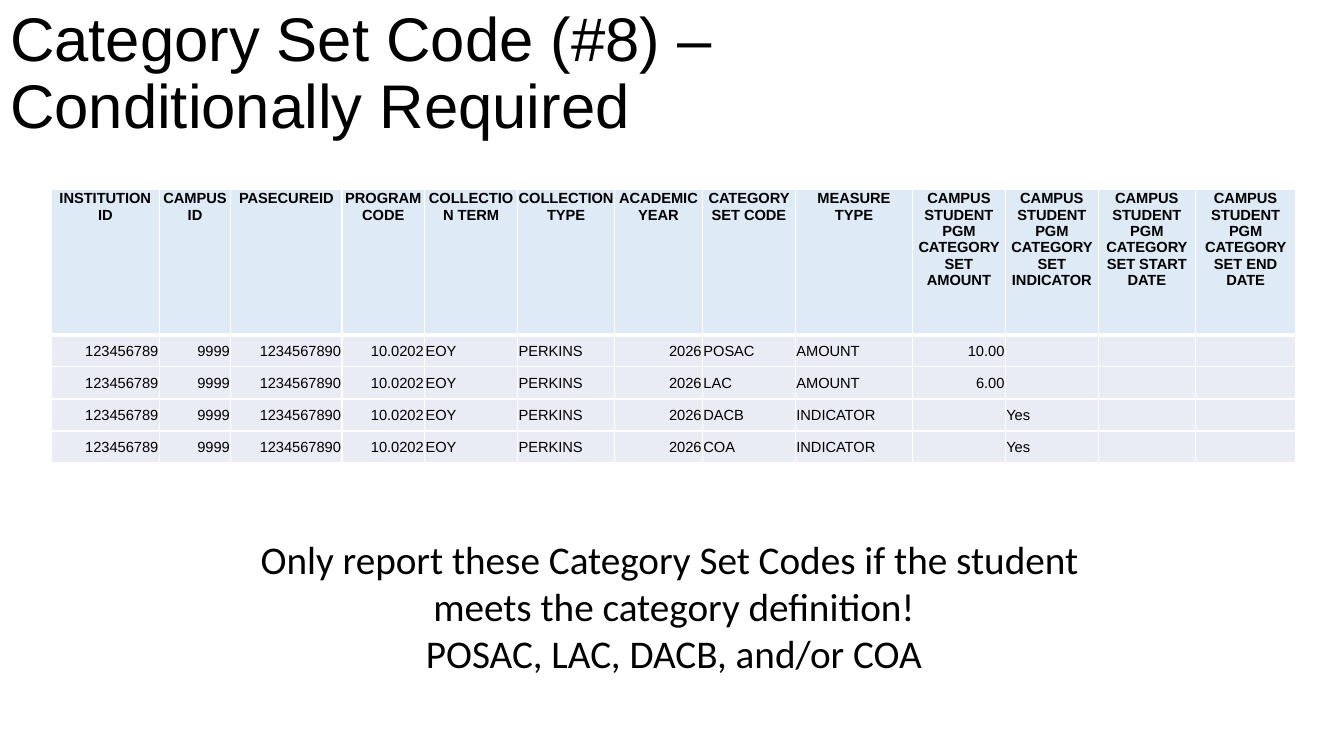
from lxml.etree import SubElement
from pptx import Presentation
from pptx.dml.color import RGBColor
from pptx.enum.text import MSO_ANCHOR, MSO_AUTO_SIZE, PP_ALIGN
from pptx.oxml.ns import qn
from pptx.util import Pt

COLORS = {"text": "000000", "header": "DEEBF7", "row": "E9EBF5", "border": "FFFFFF"}

TITLE = "Category Set Code (#8) – \nConditionally Required"
NOTE = [
    "Only report these Category Set Codes if the student ",
    "meets the category definition!",
    "POSAC, LAC, DACB, and/or COA",
]
# Heading, column width in points, alignment of the values
L, R = PP_ALIGN.LEFT, PP_ALIGN.RIGHT
COLUMNS = [
    ("INSTITUTION ID", 77.1, R),
    ("CAMPUS ID", 51.1, R),
    ("PASECUREID", 79.4, R),
    ("PROGRAM CODE", 59.1, R),
    ("COLLECTION TERM", 66.4, L),
    ("COLLECTION TYPE", 69.3, L),
    ("ACADEMIC YEAR", 62.8, R),
    ("CATEGORY SET CODE", 66.4, L),
    ("MEASURE TYPE", 83.6, L),
    ("CAMPUS STUDENT PGM CATEGORY SET AMOUNT", 66.4, R),
    ("CAMPUS STUDENT PGM CATEGORY SET INDICATOR", 66.4, L),
    ("CAMPUS STUDENT PGM CATEGORY SET START DATE", 69.3, L),
    ("CAMPUS STUDENT PGM CATEGORY SET END DATE", 71.9, L),
]
STUDENT = ["123456789", "9999", "1234567890", "10.0202", "EOY", "PERKINS", "2026"]
# Category set code, measure type, amount, indicator
CATEGORIES = [
    ("POSAC", "AMOUNT", "10.00", ""),
    ("LAC", "AMOUNT", "6.00", ""),
    ("DACB", "INDICATOR", "", "Yes"),
    ("COA", "INDICATOR", "", "Yes"),
]
LEFT, WIDTH = 36.7, 889.2
HEADER_H, ROW_H = 103.7, 22.9


def write(p, text, size, font="Arial", bold=False, align=L):
    p.text = text
    p.alignment = align
    for r in p.runs:
        r.font.size, r.font.name, r.font.bold = Pt(size), font, bold
        r.font.color.rgb = RGBColor.from_string(COLORS["text"])


def add_borders(cell, **widths):
    tc_pr = cell._tc.get_or_add_tcPr()
    for side in "LRTB":
        ln = SubElement(tc_pr, qn(f"a:ln{side}"), w=str(Pt(widths.get(side, 1))))
        fill = SubElement(ln, qn("a:solidFill"))
        SubElement(fill, qn("a:srgbClr"), val=COLORS["border"])


prs = Presentation()
prs.slide_width, prs.slide_height = Pt(960), Pt(540)
s = prs.slides.add_slide(prs.slide_layouts[5])

# Title
title = s.shapes.title
title.left, title.top, title.width, title.height = Pt(0), Pt(1.4), Pt(828), Pt(104.4)
tf = title.text_frame
tf.auto_size = MSO_AUTO_SIZE.NONE
tf.vertical_anchor = MSO_ANCHOR.MIDDLE
write(tf.paragraphs[0], TITLE, 44)
tf.paragraphs[0].line_spacing = 0.9

# Note below the table
tf = s.shapes.add_textbox(Pt(LEFT), Pt(378.7), Pt(WIDTH), Pt(108.7)).text_frame
tf.word_wrap = True
tf.auto_size = MSO_AUTO_SIZE.SHAPE_TO_FIT_TEXT
for i, line in enumerate(NOTE):
    p = tf.add_paragraph() if i else tf.paragraphs[0]
    write(p, line, 28, font="Calibri", align=PP_ALIGN.CENTER)

# Table of category set records
rows = [[heading for heading, _, _ in COLUMNS]]
rows += [STUDENT + list(category) + ["", ""] for category in CATEGORIES]
height = HEADER_H + ROW_H * len(CATEGORIES)
table = s.shapes.add_table(
    len(rows), len(COLUMNS), Pt(LEFT), Pt(135.5), Pt(WIDTH), Pt(height)
).table
for column, (_, width, _) in zip(table.columns, COLUMNS):
    column.width = Pt(width)
for i, values in enumerate(rows):
    header = i == 0
    table.rows[i].height = Pt(HEADER_H if header else ROW_H)
    for j, value in enumerate(values):
        cell = table.cell(i, j)
        cell.margin_left = cell.margin_right = cell.margin_top = Pt(0.7)
        cell.margin_bottom = Pt(0)
        cell.vertical_anchor = MSO_ANCHOR.TOP if header else MSO_ANCHOR.MIDDLE
        add_borders(cell, T=3 if i == 1 else 1, B=3 if header else 1)
        cell.fill.solid()
        cell.fill.fore_color.rgb = RGBColor.from_string(COLORS["header" if header else "row"])
        if value:
            align = PP_ALIGN.CENTER if header else COLUMNS[j][2]
            write(cell.text_frame.paragraphs[0], value, 10.5, bold=header, align=align)

prs.save("out.pptx")
